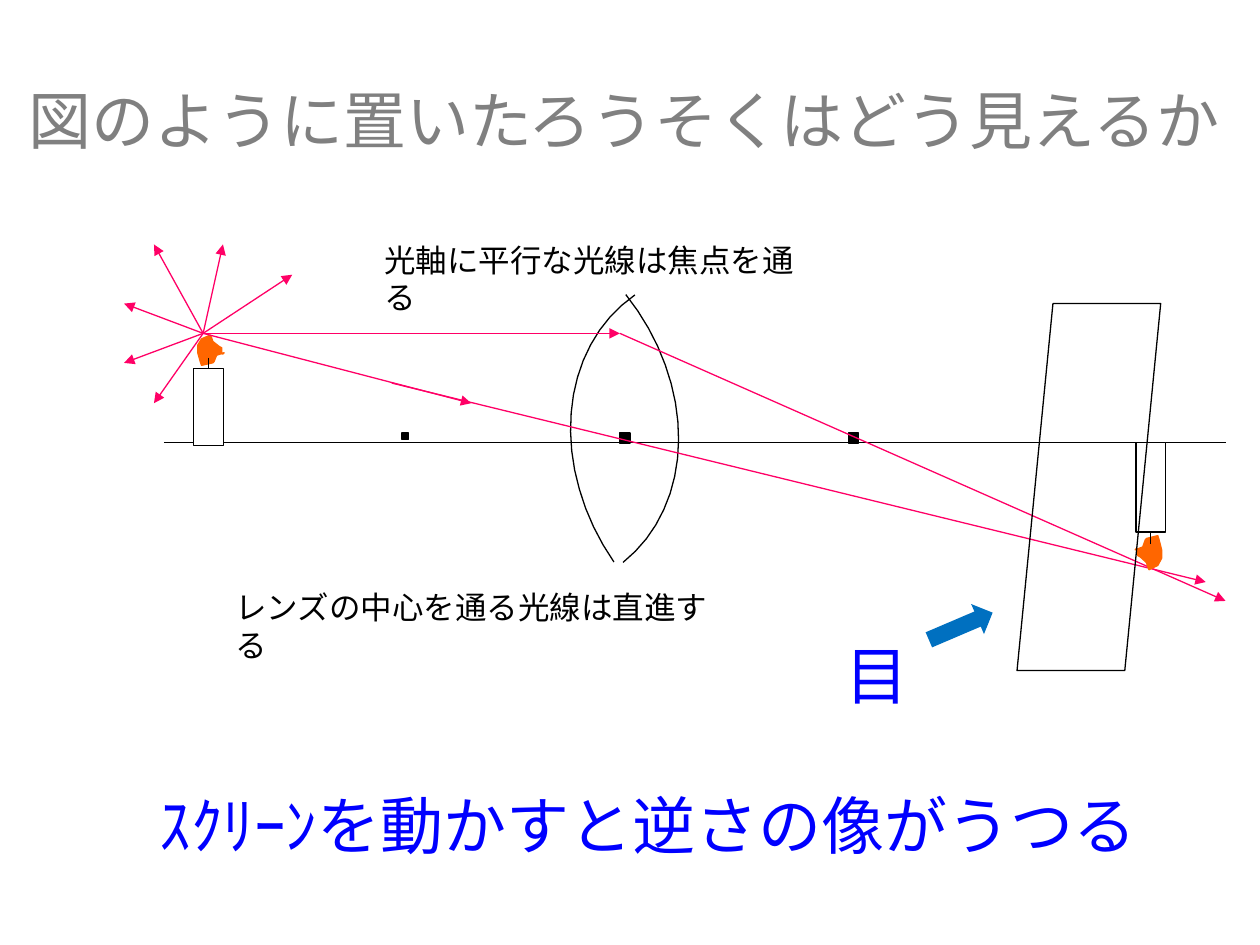
from math import cos, pi, sin

from lxml import etree
from pptx import Presentation
from pptx.dml.color import RGBColor
from pptx.enum.shapes import MSO_CONNECTOR, MSO_SHAPE
from pptx.enum.text import MSO_ANCHOR, MSO_AUTO_SIZE, PP_ALIGN
from pptx.oxml.ns import qn
from pptx.util import Pt

STRAIGHT = MSO_CONNECTOR.STRAIGHT
RECTANGLE = MSO_SHAPE.RECTANGLE
PARALLELOGRAM = MSO_SHAPE.PARALLELOGRAM
RIGHT_ARROW = MSO_SHAPE.RIGHT_ARROW
TOP = MSO_ANCHOR.TOP
NO_AUTOFIT = MSO_AUTO_SIZE.NONE
CENTER = PP_ALIGN.CENTER
LEFT = PP_ALIGN.LEFT

BLACK, WHITE, GRAY = "000000", "FFFFFF", "808080"
RAY, FLAME, BLUE, ARROW = "FF0066", "FF6600", "0000FF", "0070C0"
HEADING_FONT, LABEL_FONT = "Noto Sans CJK JP", "Arial"

FLAME_TIP = (116.1, 190.5)
LENS_EDGE = (354.2, 190.5)
AXIS_Y = 252.7
GLOW_ENDS = [(167, 157), (127.4, 139.7), (88, 139.7),
             (70.9, 173.5), (70.9, 207.4), (88, 230.4)]
RAYS = [(LENS_EDGE, (700.3, 343.4)), (FLAME_TIP, LENS_EDGE),
        *[(FLAME_TIP, end) for end in GLOW_ENDS],
        ((223.9, 218.9), (689, 332.6)), (FLAME_TIP, (269.3, 230.4))]
LENS_BOX = (297.4, 196.6, 118.8, 96.5)
LENS_ROTATIONS = (51.5, 235.4)
LENS_STEPS = 16
FOCAL_DOTS = [(229.7, 3.6), (354.2, 5.8), (484.8, 5.8)]
FLAME_OUTLINE = [
    (0, 0), (0, -6), (3, -11), (10, -14), (11, -12), (12, -9), (17, -5), (19, -4),
    (19, 1), (20, 1), (21, 0), (15, 2), (13, 7), (12, 8), (3, 10), (2, 7),
]


def rgb(value):
    return RGBColor.from_string(value)


def paint(shape, fill=None, line=BLACK):
    shape.shadow.inherit = False
    if fill:
        shape.fill.solid()
        shape.fill.fore_color.rgb = rgb(fill)
    else:
        shape.fill.background()
    if line:
        shape.line.color.rgb = rgb(line)
        shape.line.width = Pt(0.75)
    else:
        shape.line.fill.background()


def add_preset(slide, kind, left, top, width, height, fill=None, line=BLACK):
    shape = slide.shapes.add_shape(kind, Pt(left), Pt(top), Pt(width), Pt(height))
    paint(shape, fill, line)
    return shape


def add_line(slide, start, end, color=BLACK, arrow=False):
    line = slide.shapes.add_connector(STRAIGHT, *map(Pt, start + end))
    line.line.color.rgb = rgb(color)
    line.line.width = Pt(0.75)
    properties = line._element.spPr
    if arrow:
        etree.SubElement(properties.find(qn("a:ln")), qn("a:tailEnd"), type="triangle")
    etree.SubElement(properties, qn("a:effectLst"))


def add_outline(slide, outline, closed=False, fill=None, line=BLACK):
    points = [(Pt(x), Pt(y)) for x, y in outline]
    builder = slide.shapes.build_freeform(*points[0])
    builder.add_line_segments(points[1:], close=closed)
    shape = builder.convert_to_shape()
    paint(shape, fill, line)
    return shape


def add_lens_side(slide, rotation):
    left, top, width, height = LENS_BOX
    angles = [pi / 2 * step / LENS_STEPS for step in range(LENS_STEPS + 1)]
    quarter = [(left + width * sin(a), top + height * (1 - cos(a))) for a in angles]
    add_outline(slide, quarter).rotation = rotation


def add_candle(slide, body, wick, flame_origin, flame_scale):
    add_preset(slide, RECTANGLE, *body, fill=WHITE)
    (x, y), (scale_x, scale_y) = flame_origin, flame_scale
    outline = [(x + scale_x * dx, y + scale_y * dy) for dx, dy in FLAME_OUTLINE]
    add_outline(slide, outline, closed=True, fill=FLAME, line=FLAME)
    add_line(slide, *wick)


def write_text(holder, text, box, size, font_name, color, align=CENTER, wrap=False):
    holder.left, holder.top, holder.width, holder.height = map(Pt, box)
    frame = holder.text_frame
    frame.text = text
    frame.word_wrap = wrap
    frame.auto_size = NO_AUTOFIT
    frame.vertical_anchor = TOP
    if not wrap:
        frame.margin_left = frame.margin_right = 0
        frame.margin_top = frame.margin_bottom = 0
    paragraph = frame.paragraphs[0]
    paragraph.alignment = align
    font = paragraph.font
    font.size = Pt(size)
    font.color.rgb = rgb(color)
    font.name = font_name
    etree.SubElement(font._element, qn("a:ea"), typeface=font_name)


def add_text(slide, text, box, *style, **layout):
    holder = slide.shapes.add_textbox(0, 0, 0, 0)
    write_text(holder, text, box, *style, **layout)


def main():
    deck = Presentation()
    deck.slide_width, deck.slide_height = Pt(720), Pt(540)
    slide = deck.slides.add_slide(deck.slide_layouts[5])
    write_text(slide.shapes.title, "図のように置いたろうそくはどう見えるか",
               (6.8, 46.5, 700, 45.4), 36, HEADING_FONT, GRAY)

    add_line(slide, (93.6, AXIS_Y), (700.3, AXIS_Y))
    for rotation in LENS_ROTATIONS:
        add_lens_side(slide, rotation)
    for left, size in FOCAL_DOTS:
        add_preset(slide, RECTANGLE, left, 247.4, size, size, fill=BLACK)

    add_candle(slide, (110.4, 210.4, 17.3, 44.3), ((119.1, 204.5), (119.1, 210.4)),
               (113, 201.6), (0.72, 0.72))
    for start, end in RAYS:
        add_line(slide, start, end, RAY, arrow=True)
    add_candle(slide, (649.2, AXIS_Y, 17, 51.3), ((657.5, 311), (657.5, 304)),
               (663.8, 314.2), (-0.72, -0.81))

    screen = add_preset(slide, PARALLELOGRAM, 581.2, 173.5, 82.1, 209.7)
    screen.adjustments[0] = 0.25

    add_text(slide, "目", (484.2, 363.6, 33.8, 39.6), 36, HEADING_FONT, BLUE)
    for label, box in [
        ("光軸に平行な光線は焦点を通る", (212.4, 134, 260.6, 28.8)),
        ("レンズの中心を通る光線は直進する", (127.4, 332.6, 289.4, 28.8)),
    ]:
        add_text(slide, label, box, 18, LABEL_FONT, BLACK, align=LEFT, wrap=True)
    add_text(slide, "ｽｸﾘｰﾝを動かすと逆さの像がうつる",
             (116.2, 449.3, 508.3, 36), 36, HEADING_FONT, BLUE)

    eye_arrow = add_preset(slide, RIGHT_ARROW, 529.2, 348.5, 39.6, 18.7, ARROW, None)
    eye_arrow.rotation = 336.9
    deck.save("out.pptx")


if __name__ == "__main__":
    main()
